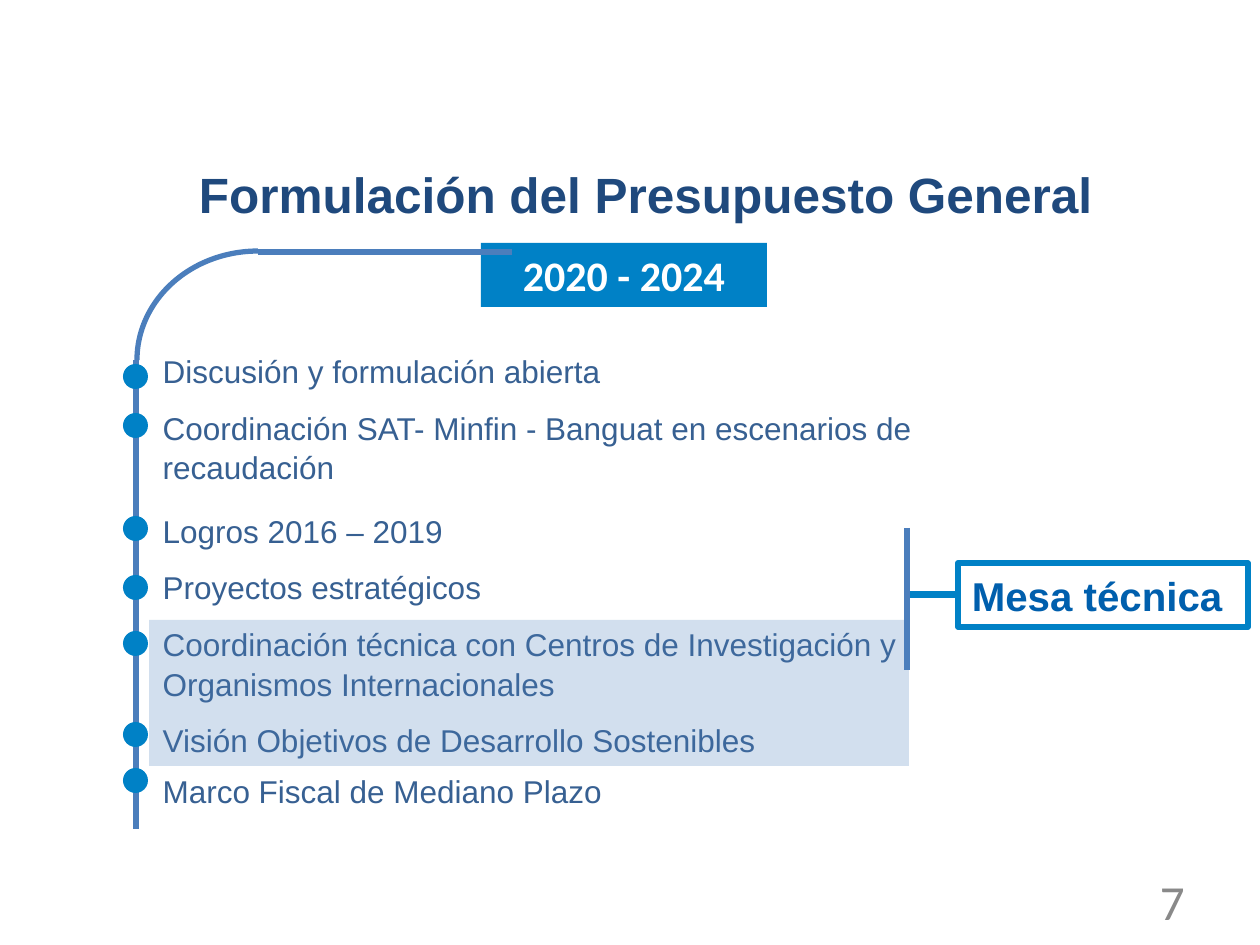
from dataclasses import dataclass

from lxml.etree import SubElement
from pptx import Presentation
from pptx.dml.color import RGBColor
from pptx.enum.shapes import MSO_CONNECTOR, MSO_SHAPE
from pptx.enum.text import MSO_ANCHOR, MSO_AUTO_SIZE, PP_ALIGN
from pptx.oxml.ns import qn
from pptx.util import Pt


@dataclass(frozen=True)
class Theme:
    """Hold the colours, fonts and type sizes of the slide."""
    blue: str = "0081C6"
    rail: str = "4B7EBC"
    band: str = "4F81BD"
    body: str = "376092"
    navy: str = "1F497D"
    label: str = "005FAD"
    white: str = "FFFFFF"
    grey: str = "898989"
    sans: str = "Arial"
    round: str = "Calibri"
    title_pt: float = 28.3
    tag_pt: int = 24
    mesa_pt: int = 23
    body_pt: int = 18
    page_pt: int = 28


T = Theme()
ITEMS = [
    ("Discusión y formulación abierta", 0, 1.04),
    ("Coordinación SAT- Minfin - Banguat en escenarios de recaudación", 10, 1.04),
    ("Logros 2016 – 2019", 14, 1.04),
    ("Proyectos estratégicos", 10, 1.04),
    ("Coordinación técnica con Centros de Investigación y "
     "Organismos Internacionales", 10, 1.04),
    ("Visión Objetivos de Desarrollo Sostenibles", 10, 1.04),
    ("Marco Fiscal de Mediano Plazo", 10, 0.9),
]
DOTS = (376, 425, 528, 587, 643, 734, 780)


def px(n):
    """Turn pixels into EMU."""
    return round(n * 914400 / 126)


def place(shape, box):
    """Move a shape to a pixel box."""
    shape.left, shape.top, shape.width, shape.height = map(px, box)


def write(para, text, size, color, font=T.sans, bold=False,
          align=PP_ALIGN.CENTER, before=0, lead=1.0):
    """Put formatted text into a paragraph."""
    para.alignment = align
    para.space_before = Pt(before)
    para.line_spacing = lead
    run = para.add_run()
    run.text = text
    run.font.size = Pt(size)
    run.font.name = font
    run.font.bold = bold
    run.font.color.rgb = RGBColor.from_string(color)


def frame(shape, anchor=MSO_ANCHOR.MIDDLE):
    """Set up the text frame of a shape and return it."""
    text = shape.text_frame
    text.word_wrap = True
    text.auto_size = MSO_AUTO_SIZE.NONE
    text.vertical_anchor = anchor
    return text


def draw(slide, kind, box, fill=None, line=None, width=3):
    """Add a preset shape with plain fill and line."""
    shape = slide.shapes.add_shape(kind, *map(px, box))
    shape.shadow.inherit = False
    if fill:
        shape.fill.solid()
        shape.fill.fore_color.rgb = RGBColor.from_string(fill)
    else:
        shape.fill.background()
    if line:
        shape.line.color.rgb = RGBColor.from_string(line)
        shape.line.width = Pt(width)
    else:
        shape.line.fill.background()
    return shape


def link(slide, ends, color=T.rail, width=3):
    """Add a straight line without a shadow."""
    line = slide.shapes.add_connector(MSO_CONNECTOR.STRAIGHT, *map(px, ends))
    line.line.color.rgb = RGBColor.from_string(color)
    line.line.width = Pt(width)
    SubElement(line._element.spPr, qn("a:effectLst"))
    return line


def heading(slide, box):
    """Fill the title and set the year tag below it."""
    x, y, _, h = box
    title = slide.shapes.title
    place(title, box)
    write(frame(title).paragraphs[0], "Formulación del Presupuesto General",
          T.title_pt, T.navy, bold=True)
    tag = draw(slide, MSO_SHAPE.RECTANGLE, (x + 407, y + h + 1, 286, 64), T.blue)
    write(frame(tag).paragraphs[0], "2020 - 2024", T.tag_pt, T.white,
          font=T.round, bold=True)


def listing(slide, box):
    """Fill the body with the list and shade two of its items."""
    x, y, _, _ = box
    body = slide.placeholders[1]
    place(body, box)
    text = frame(body, MSO_ANCHOR.TOP)
    for i, (item, before, lead) in enumerate(ITEMS):
        para = text.add_paragraph() if i else text.paragraphs[0]
        props = para._p.get_or_add_pPr()
        props.set("marL", "0")
        props.set("indent", "0")
        SubElement(props, qn("a:buNone"))
        write(para, item, T.body_pt, T.body, align=PP_ALIGN.LEFT,
              before=before, lead=lead)
    band = draw(slide, MSO_SHAPE.RECTANGLE, (x - 1, y + 276, 760, 146), T.band)
    tint = band.fill._xPr.find(".//" + qn("a:srgbClr"))
    SubElement(tint, qn("a:alpha")).set("val", "25000")


def rail(slide, box):
    """Draw the curved rail and its dots."""
    x, y, w, h = box
    wide, high, dot = 242, 218, 25
    mid = x + 14 + wide // 2
    turn = y + high // 2
    arc = draw(slide, MSO_SHAPE.ARC,
               (mid - high // 2, turn - wide // 2, high, wide), line=T.rail)
    arc.rotation = 270
    link(slide, (x + 13, turn, x + 13, y + h))
    link(slide, (mid, y + 1, x + w, y + 1))
    for row in DOTS:
        draw(slide, MSO_SHAPE.OVAL, (x, row - dot // 2, dot, dot), T.blue)


def mesa(slide, box):
    """Draw the bracket and the box it leads to."""
    x, y, w, h = box
    card = draw(slide, MSO_SHAPE.RECTANGLE, (x + 51, y + 35, w - 51, 64),
                line=T.blue, width=3.25)
    write(frame(card).paragraphs[0], "Mesa técnica ", T.mesa_pt, T.label,
          bold=True)
    stem = link(slide, (x + 51, y + 67, x, y + 67), T.blue, 4)
    stem.begin_connect(card, 1)
    link(slide, (x, y, x, y + h))


def page(slide, box):
    """Write the page number."""
    note = slide.shapes.add_textbox(*map(px, box))
    write(frame(note).paragraphs[0], "7", T.page_pt, T.grey, font=T.round,
          align=PP_ALIGN.RIGHT)


def main():
    """Build the slide and save it."""
    deck = Presentation()
    deck.slide_width, deck.slide_height = px(1260), px(945)
    slide = deck.slides.add_slide(deck.slide_layouts[1])
    listing(slide, (150, 344, 796, 625))
    heading(slide, (74, 145, 1145, 97))
    rail(slide, (123, 251, 389, 578))
    mesa(slide, (907, 528, 341, 142))
    page(slide, (903, 876, 294, 50))
    deck.save("out.pptx")


if __name__ == "__main__":
    main()
